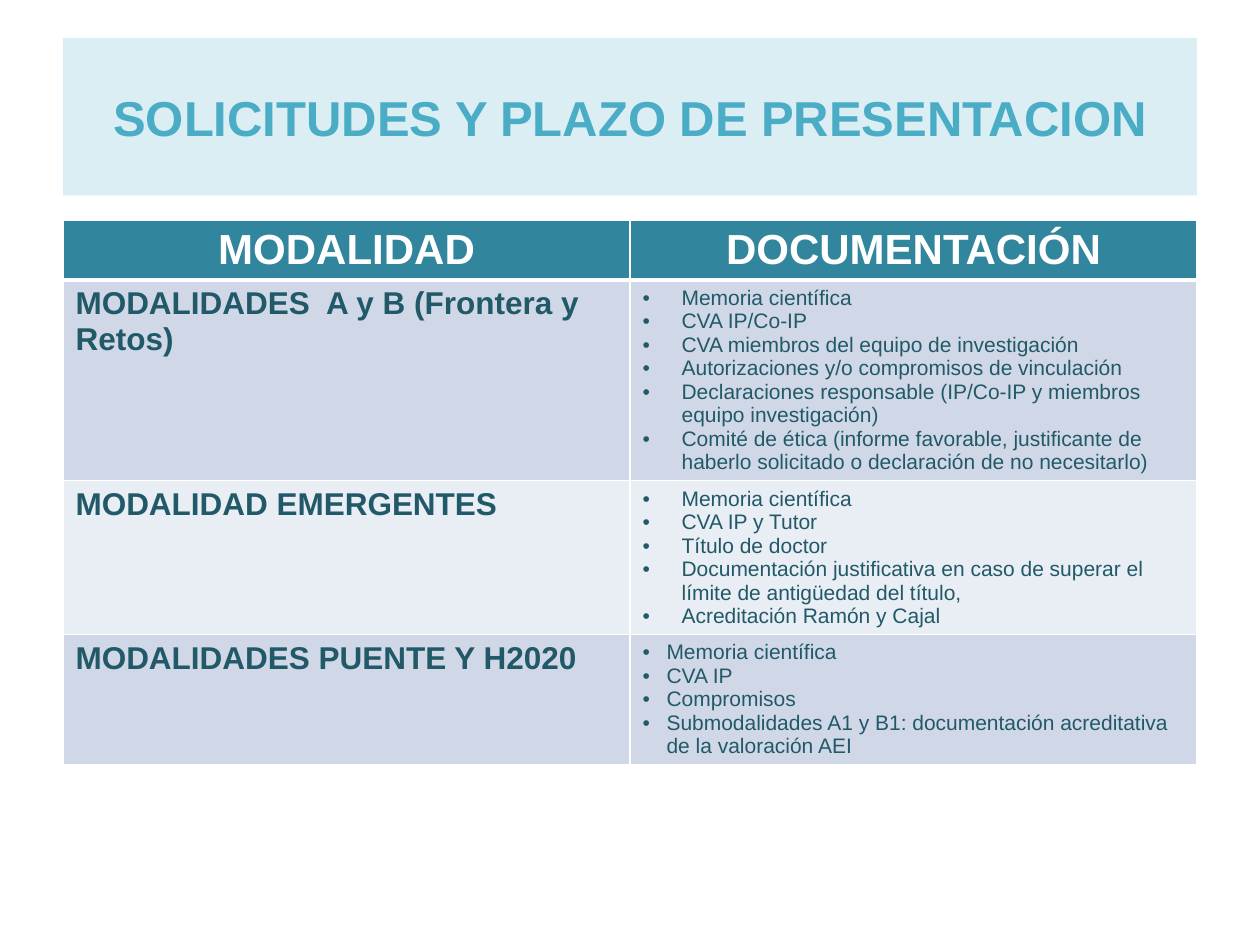
import pptx
import pptx.dml.color
import pptx.enum.shapes
import pptx.enum.text
import pptx.oxml.ns
import pptx.util
from lxml import etree

COLORS = {
    "banner": "DBEEF4",
    "title": "4BACC6",
    "header": "31859C",
    "white": "FFFFFF",
    "text": "215968",
    "odd": "D0D8E8",
    "even": "E9EDF4",
}
HEADINGS = ("MODALIDAD", "DOCUMENTACIÓN")
# Each entry: modality, bullet indent in inches, required documents
MODALITIES = [
    ("MODALIDADES  A y B (Frontera y Retos)", 0.31, [
        "Memoria científica",
        "CVA IP/Co-IP",
        "CVA miembros del equipo de investigación",
        "Autorizaciones y/o compromisos de vinculación",
        "Declaraciones responsable (IP/Co-IP y miembros equipo investigación)",
        "Comité de ética (informe favorable, justificante de haberlo solicitado "
        "o declaración de no necesitarlo)",
    ]),
    ("MODALIDAD EMERGENTES", 0.31, [
        "Memoria científica",
        "CVA IP y Tutor",
        "Título de doctor",
        "Documentación justificativa en caso de superar el límite de antigüedad del título,",
        "Acreditación Ramón y Cajal",
    ]),
    ("MODALIDADES PUENTE Y H2020", 0.19, [
        "Memoria científica",
        "CVA IP",
        "Compromisos",
        "Submodalidades A1 y B1: documentación acreditativa de la valoración AEI",
    ]),
]
ROW_HEIGHTS = (1.88, 6.36, 4.88, 4.12)  # in grid rows


class SlideBuilder:
    """Places elements on a grid of 20 columns by 30 rows."""
    font = "Arial"
    columns, rows = 20, 30

    def __init__(self, deck):
        self.slide = deck.slides.add_slide(deck.slide_layouts[6])
        self.column = deck.slide_width / self.columns
        self.row = deck.slide_height / self.rows

    def box(self, left, top, width, height):
        return (int(left * self.column), int(top * self.row),
                int(width * self.column), int(height * self.row))

    def color(self, name):
        return pptx.dml.color.RGBColor.from_string(COLORS[name])

    def paint(self, target, name):
        target.fill.solid()
        target.fill.fore_color.rgb = self.color(name)

    def add_text(self, paragraph, text, size, color, bold=True, centered=False):
        align = pptx.enum.text.PP_ALIGN
        paragraph.alignment = align.CENTER if centered else align.LEFT
        run = paragraph.add_run()
        run.text = text
        run.font.name = self.font
        run.font.size = pptx.util.Pt(size)
        run.font.bold = bold
        run.font.color.rgb = self.color(color)

    def banner(self, text, *place):
        banner = self.slide.shapes.add_shape(
            pptx.enum.shapes.MSO_SHAPE.RECTANGLE, *self.box(*place))
        banner.shadow.inherit = False
        banner.line.fill.background()
        self.paint(banner, "banner")
        banner.text_frame.word_wrap = True
        banner.text_frame.vertical_anchor = pptx.enum.text.MSO_ANCHOR.MIDDLE
        self.add_text(banner.text_frame.paragraphs[0], text, 28, "title", centered=True)

    def table(self, left, top, width, row_heights, column_count):
        frame = self.slide.shapes.add_table(
            len(row_heights), column_count,
            *self.box(left, top, width, sum(row_heights)))
        for row, height in zip(frame.table.rows, row_heights):
            row.height = int(height * self.row)
        return frame.table

    def cell(self, cell, fill, top=1, bottom=1):
        """Gives the cell white borders (widths in points) and a fill."""
        properties = cell._tc.get_or_add_tcPr()
        for side, width in (("L", 1), ("R", 1), ("T", top), ("B", bottom)):
            border = etree.SubElement(properties, pptx.oxml.ns.qn(f"a:ln{side}"),
                                      w=str(pptx.util.Pt(width)))
            solid = etree.SubElement(border, pptx.oxml.ns.qn("a:solidFill"))
            etree.SubElement(solid, pptx.oxml.ns.qn("a:srgbClr"), val=COLORS["white"])
        self.paint(cell, fill)

    def bullets(self, frame, items, indent):
        for index, item in enumerate(items):
            paragraph = frame.add_paragraph() if index else frame.paragraphs[0]
            self.add_text(paragraph, item, 12, "text", bold=False)
            properties = paragraph._p.get_or_add_pPr()
            offset = pptx.util.Inches(indent)
            properties.set("marL", str(offset))
            properties.set("indent", str(-offset))
            etree.SubElement(properties, pptx.oxml.ns.qn("a:buFont"), typeface=self.font)
            etree.SubElement(properties, pptx.oxml.ns.qn("a:buChar"), char="•")


def main():
    deck = pptx.Presentation()
    deck.slide_width = pptx.util.Inches(10)
    deck.slide_height = pptx.util.Inches(7.5)
    builder = SlideBuilder(deck)
    builder.banner("SOLICITUDES Y PLAZO DE PRESENTACION", 1, 1.2, 18, 5)

    requirements = builder.table(1, 7, 18, ROW_HEIGHTS, len(HEADINGS))
    for column, heading in enumerate(HEADINGS):
        cell = requirements.cell(0, column)
        builder.cell(cell, "header", bottom=3)
        builder.add_text(cell.text_frame.paragraphs[0], heading, 24, "white", centered=True)

    for row, (modality, indent, documents) in enumerate(MODALITIES, start=1):
        name_cell, documents_cell = requirements.cell(row, 0), requirements.cell(row, 1)
        for cell in (name_cell, documents_cell):
            builder.cell(cell, "odd" if row % 2 else "even", top=3 if row == 1 else 1)
        builder.add_text(name_cell.text_frame.paragraphs[0], modality, 18, "text")
        builder.bullets(documents_cell.text_frame, documents, indent)

    deck.save("out.pptx")


if __name__ == "__main__":
    main()
